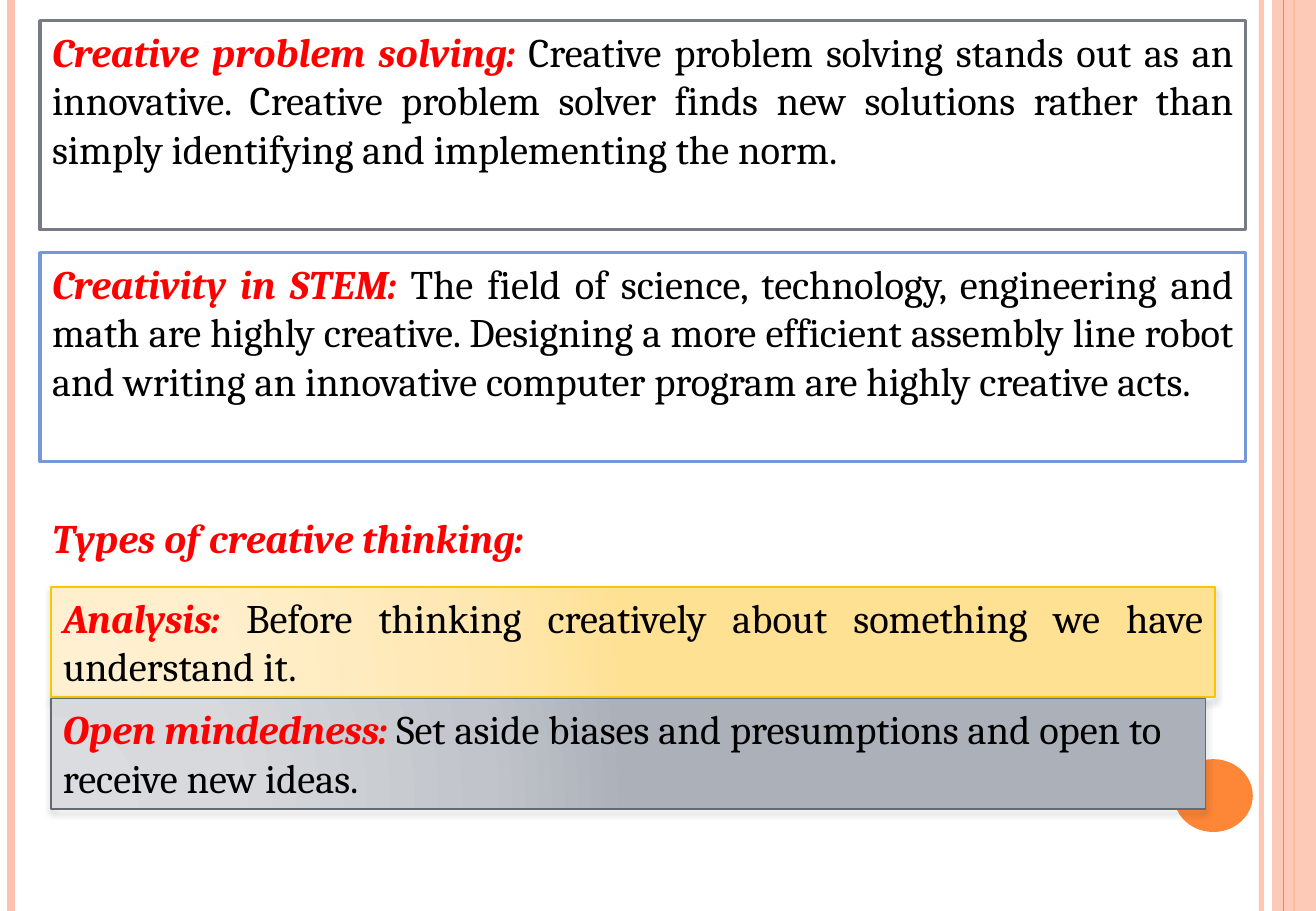
import pptx
import pptx.dml.color
import pptx.enum.shapes
import pptx.enum.text
import pptx.oxml
import pptx.oxml.ns
import pptx.util
from pptx.util import Inches

PEACH = "FEC3AE"
ORANGE = "FE8637"
RED = "FF0000"
BLACK = "000000"
NAMESPACE = 'xmlns:a="http://schemas.openxmlformats.org/drawingml/2006/main"'
SHAPE = pptx.enum.shapes.MSO_SHAPE
ALIGN = pptx.enum.text.PP_ALIGN


def color(value):
    return pptx.dml.color.RGBColor.from_string(value)


def element(xml):
    return pptx.oxml.parse_xml(xml.replace(" ", f" {NAMESPACE} ", 1))


def set_alpha(fill_parent, percent):
    tint = fill_parent.find(".//" + pptx.oxml.ns.qn("a:srgbClr"))
    tint.append(element(f'<a:alpha val="{percent * 1000}"/>'))


def add_rule(page, x, line_color, width, alpha=100):
    rule = page.shapes.add_connector(
        pptx.enum.shapes.MSO_CONNECTOR.STRAIGHT, Inches(x), 0, Inches(x), Inches(7.5))
    rule.line.color.rgb = color(line_color)
    rule.line.width = pptx.util.Pt(width)
    if alpha < 100:
        set_alpha(rule.line._get_or_add_ln(), alpha)
    rule._element.spPr.append(element("<a:effectLst />"))


def add_box(page, kind, left, top, width, height, fill, line=None, line_width=1):
    box = page.shapes.add_shape(
        kind, Inches(left), Inches(top), Inches(width), Inches(height))
    box.shadow.inherit = False
    box.fill.solid()
    box.fill.fore_color.rgb = color(fill)
    if line:
        box.line.color.rgb = color(line)
        box.line.width = pptx.util.Pt(line_width)
    else:
        box.line.fill.background()
    return box


def add_gradient(box, shades):
    stops = "".join(
        f'<a:gs pos="{place * 1000}"><a:srgbClr val="{shade}"/></a:gs>'
        for place, shade in zip((0, 30, 75, 100), shades))
    properties = box._element.spPr
    solid = properties.find(pptx.oxml.ns.qn("a:solidFill"))
    properties.replace(solid, element(
        f'<a:gradFill rotWithShape="1"><a:gsLst>{stops}</a:gsLst><a:path path="circle">'
        '<a:fillToRect l="5000" t="100000" r="120000" b="10000"/></a:path></a:gradFill>'))


def add_shadow(box):
    effects = box._element.spPr.find(pptx.oxml.ns.qn("a:effectLst"))
    effects.append(element(
        f'<a:outerShdw blurRad="{pptx.util.Pt(4)}" dist="{pptx.util.Pt(2)}" dir="5400000" '
        'rotWithShape="0"><a:srgbClr val="000000"><a:alpha val="40000"/></a:srgbClr>'
        '</a:outerShdw>'))


def write_text(box, heading, body="", align=ALIGN.JUSTIFY):
    frame = box.text_frame
    frame.word_wrap = True
    frame.auto_size = pptx.enum.text.MSO_AUTO_SIZE.NONE
    frame.vertical_anchor = pptx.enum.text.MSO_ANCHOR.TOP
    para = frame.paragraphs[0]
    para.alignment = align
    for text, shade, strong in ((heading, RED, True), (body, BLACK, False)):
        if text:
            span = para.add_run()
            span.text = text
            span.font.name = "Cambria"
            span.font.size = pptx.util.Pt(24)
            span.font.bold = span.font.italic = strong
            span.font.color.rgb = color(shade)


def add_definition(page, top, line, heading, body):
    box = add_box(page, SHAPE.RECTANGLE, 0.33, top, 9.92, 1.72, "FFFFFF", line, 2)
    write_text(box, heading, body)


def add_type(page, top, width, line, shades, heading, body, align):
    box = add_box(page, SHAPE.RECTANGLE, 0.42, top, width, 0.91, shades[-1], line)
    add_gradient(box, shades)
    add_shadow(box)
    write_text(box, heading, body, align)


def add_heading(page, text):
    title = page.shapes.title
    title.left, title.top = Inches(0.33), Inches(4.17)
    title.width, title.height = Inches(4.88), Inches(0.5)
    write_text(title, text, align=ALIGN.LEFT)


def add_decoration(page):
    add_rule(page, 10.38, PEACH, 3, 93)
    add_rule(page, 0.09, PEACH, 4.5)
    add_rule(page, 10.65, ORANGE, 1.5)
    band = add_box(page, SHAPE.RECTANGLE, 10.47, 0, 0.36, 7.5, PEACH)
    set_alpha(band._element.spPr, 87)
    add_rule(page, 10.56, ORANGE, 0.75)
    add_box(page, SHAPE.OVAL, 9.66, 6.25, 0.65, 0.6, ORANGE)


def main():
    deck = pptx.Presentation()
    deck.slide_width, deck.slide_height = Inches(10.83), Inches(7.5)
    page = deck.slides.add_slide(deck.slide_layouts.get_by_name("Title Only"))
    add_decoration(page)
    add_definition(
        page, 0.17, "777C84", "Creative problem solving: ",
        "Creative problem solving stands out as an innovative. Creative problem solver "
        "finds new solutions rather than simply identifying and implementing the norm.")
    add_definition(
        page, 2.08, "7598D9", "Creativity in STEM: ",
        "The field of science, technology, engineering and math are highly creative. "
        "Designing a more efficient assembly line robot and writing an innovative "
        "computer program are highly creative acts.")
    add_heading(page, "Types of creative thinking:")
    add_type(
        page, 4.83, 9.58, "F8C700", ("FFF0D1", "FFEFCC", "FFE7B1", "FFE193"),
        "Analysis: ", "Before thinking creatively about something we have understand it.",
        ALIGN.JUSTIFY)
    add_type(
        page, 5.75, 9.5, "636A74", ("DADCE0", "D7D9DD", "C1C5CB", "ABB0B9"),
        "Open mindedness: ",
        "Set aside biases and presumptions and open to receive new ideas.", ALIGN.LEFT)
    deck.save("out.pptx")


if __name__ == "__main__":
    main()
